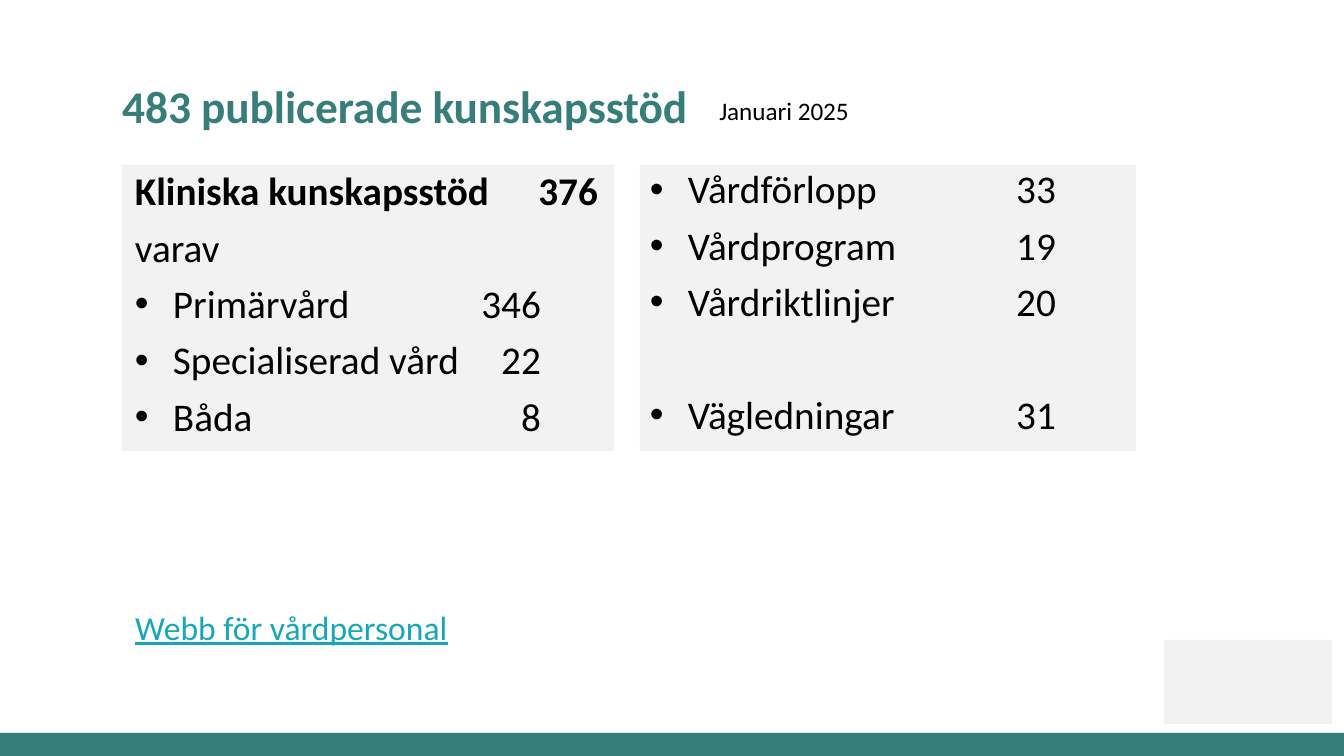
from lxml import etree
from pptx import Presentation
from pptx.dml.color import RGBColor
from pptx.enum.shapes import MSO_SHAPE
from pptx.enum.text import MSO_ANCHOR
from pptx.oxml.ns import qn
from pptx.util import Pt

RECT = MSO_SHAPE.RECTANGLE
TOP, BOTTOM = MSO_ANCHOR.TOP, MSO_ANCHOR.BOTTOM

TEAL = RGBColor(0x37, 0x7D, 0x7A)
CYAN = RGBColor(0x18, 0xA7, 0xB8)
GREY = RGBColor(0xF2, 0xF2, 0xF2)
BLACK = RGBColor(0, 0, 0)

WIDE, HIGH = 1344, 756
FONT = "Calibri"
INDENT, TAB, FAR = 38, 406, 463
GAP, SKIP = 7.5, 37.7  # points before a row, and before a row set apart

# text, bold, bullet, points before, right tab
CLINICAL = [
    ("Kliniska kunskapsstöd \t376", True, False, 0, FAR),
    ("varav", False, False, GAP, TAB),
    ("Primärvård \t346", False, True, GAP, TAB),
    ("Specialiserad vård \t22", False, True, GAP, TAB),
    ("Båda \t8", False, True, GAP, TAB),
]
OTHERS = [
    ("Vårdförlopp\t33", False, True, 0, TAB),
    ("Vårdprogram\t19", False, True, GAP, TAB),
    ("Vårdriktlinjer\t20", False, True, GAP, TAB),
    ("Vägledningar\t31", False, True, SKIP, TAB),
]


def px(n):
    return round(n * 914400 / 134.4)


def style(para, size, color=BLACK, bold=False, under=False):
    for run in para.runs:
        font = run.font
        font.name, font.size = FONT, Pt(size)
        font.bold, font.underline = bold, under
        font.color.rgb = color


def label(slide, box, text, size, color=BLACK, bold=False, under=False,
          anchor=TOP, space=None):
    """Add a text box of one paragraph."""
    frame = slide.shapes.add_textbox(*map(px, box)).text_frame
    frame.word_wrap = True
    frame.vertical_anchor = anchor
    frame.text = text
    para = frame.paragraphs[0]
    para.line_spacing = space
    style(para, size, color, bold, under)


def tabbed(para, bullet, stop):
    """Give a paragraph its right tab and, if wanted, a hanging bullet."""
    props = para._p.get_or_add_pPr()
    if bullet:
        props.set("marL", str(px(INDENT)))
        props.set("indent", str(-px(INDENT)))
        font = etree.SubElement(props, qn("a:buFont"))
        font.set("typeface", "Arial")
        etree.SubElement(props, qn("a:buChar")).set("char", "•")
    tabs = etree.SubElement(props, qn("a:tabLst"))
    tab = etree.SubElement(tabs, qn("a:tab"))
    tab.set("pos", str(px(stop)))
    tab.set("algn", "r")


def panel(slide, box, rows, side, top):
    """Add a grey box of tabbed rows, with the given side and top insets."""
    shape = slide.shapes.add_textbox(*map(px, box))
    shape.fill.solid()
    shape.fill.fore_color.rgb = GREY
    frame = shape.text_frame
    frame.word_wrap = True
    frame.margin_left = frame.margin_right = px(side)
    frame.margin_top = frame.margin_bottom = px(top)
    frame.text = "\n".join(row[0] for row in rows)
    for para, (_, bold, bullet, before, stop) in zip(frame.paragraphs, rows):
        tabbed(para, bullet, stop)
        para.line_spacing = 0.9
        para.space_before = Pt(before)
        style(para, 21, bold=bold)


def header(slide, x, y):
    label(slide, (x, y, 593, 67), "483 publicerade kunskapsstöd", 24.3,
          TEAL, bold=True, anchor=BOTTOM, space=0.9)
    label(slide, (x + 597, y + 16, 175, 44), "Januari 2025", 13.5)


def block(slide, box, color):
    """Add a plain filled rectangle."""
    shape = slide.shapes.add_shape(RECT, *map(px, box))
    shape.shadow.inherit = False
    shape.fill.solid()
    shape.fill.fore_color.rgb = color
    shape.line.fill.background()


def main():
    deck = Presentation()
    deck.slide_width, deck.slide_height = px(WIDE), px(HIGH)
    slide = deck.slides.add_slide(deck.slide_layouts[6])
    block(slide, (0, 733, WIDE, 23), TEAL)
    block(slide, (1164, 640, 168, 84), GREY)
    header(slide, 109, 73)
    panel(slide, (122, 165, 492, 286), CLINICAL, 13, 7)
    panel(slide, (640, 165, 496, 286), OTHERS, 10, 5)
    label(slide, (122, 600, 371, 54), "Webb för vårdpersonal", 18, CYAN,
          under=True)
    deck.save("out.pptx")


if __name__ == "__main__":
    main()
